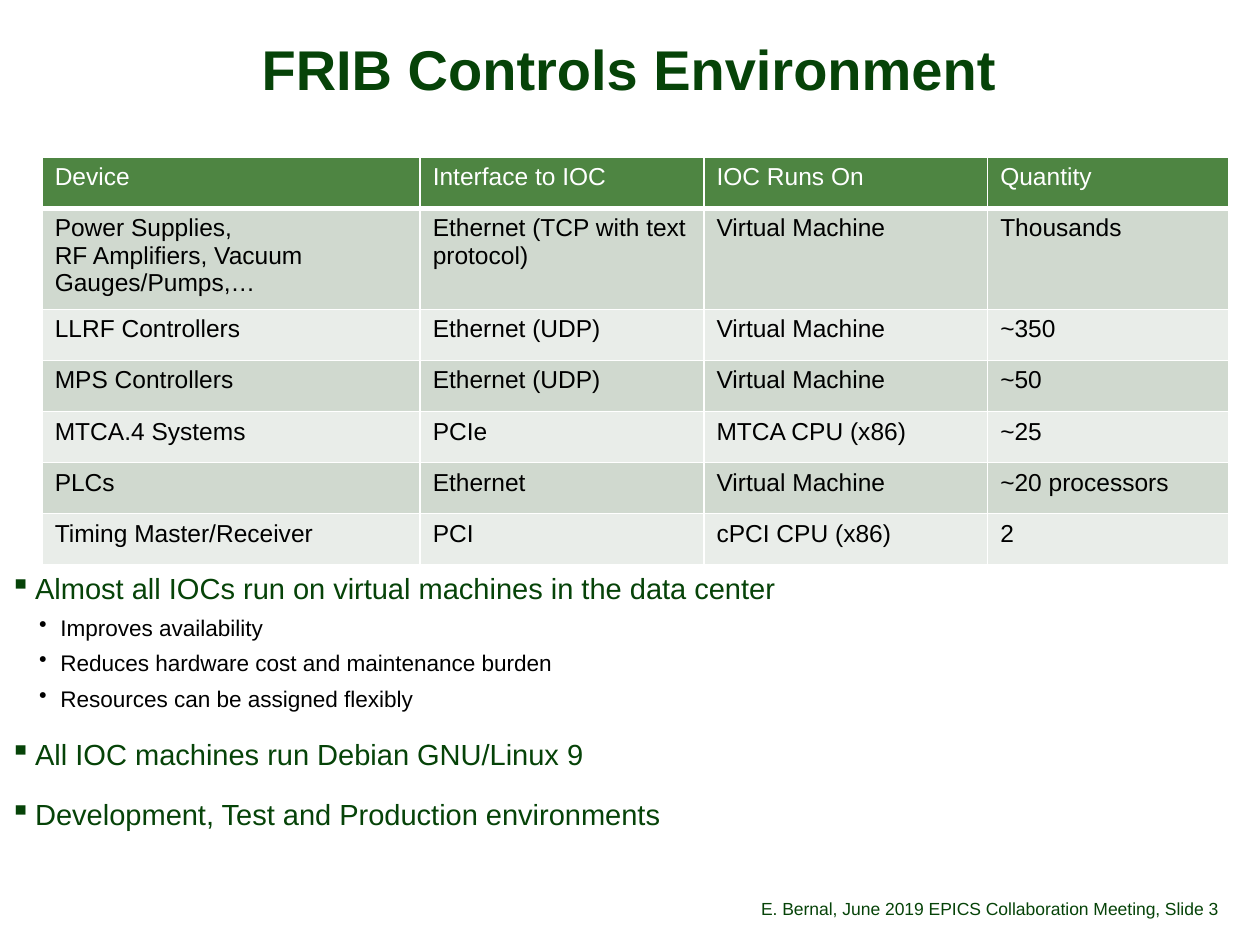
import pptx
import pptx.dml.color
import pptx.enum.text
import pptx.oxml
import pptx.oxml.ns
import pptx.util
from lxml import etree

Cm, Pt = pptx.util.Cm, pptx.util.Pt
ALIGN = pptx.enum.text.PP_ALIGN
ANCHOR = pptx.enum.text.MSO_ANCHOR

TITLE = "FRIB Controls Environment"
FOOTER = "E. Bernal, June 2019 EPICS Collaboration Meeting"
SLIDE_LABEL = ", Slide 3"
DEVICES = [
    ("Device", "Interface to IOC", "IOC Runs On", "Quantity"),
    ("Power Supplies,\vRF Amplifiers, Vacuum Gauges/Pumps,…",
     "Ethernet (TCP with text protocol)", "Virtual Machine", "Thousands"),
    ("LLRF Controllers", "Ethernet (UDP)", "Virtual Machine", "~350"),
    ("MPS Controllers", "Ethernet (UDP)", "Virtual Machine", "~50"),
    ("MTCA.4 Systems", "PCIe", "MTCA CPU (x86)", "~25"),
    ("PLCs", "Ethernet", "Virtual Machine", "~20 processors"),
    ("Timing Master/Receiver", "PCI", "cPCI CPU (x86)", "2"),
]
POINTS = [
    (0, "Almost all IOCs run on virtual machines in the data center"),
    (1, "Improves availability"),
    (1, "Reduces hardware cost and maintenance burden"),
    (1, "Resources can be assigned flexibly"),
    (0, "All IOC machines run Debian GNU/Linux 9"),
    (0, "Development, Test and Production environments"),
]

THEME = {
    "font": "Arial",
    "green": "064308", "black": "000000", "white": "FFFFFF",
    "header": "4E8542", "bands": ("D0D9CF", "E9EDE9"),
    "title": 32, "footer": 10, "table": 14,
}
LEVELS = [
    {"bullet": "▪", "left": 0.51, "hang": 0.51, "before": 12.1, "size": 16.6, "color": "green"},
    {"bullet": "•", "left": 1.02, "hang": 0.43, "before": 2, "size": 12.9, "color": "black"},
]
COLUMN_WIDTHS = (7.62, 5.72, 5.72, 4.87)
ROW_HEIGHT, TALL_ROW_HEIGHT = 1.03, 1.92


def rgb(value):
    return pptx.dml.color.RGBColor.from_string(value)


def apply(target, values):
    for name, value in values.items():
        setattr(target, name, value)


def style_run(r, size, color, bold=False):
    apply(r.font, {"name": THEME["font"], "size": Pt(size), "bold": bold})
    r.font.color.rgb = rgb(THEME[color])


def add_run(p, text, size, color, bold=False):
    r = p.add_run()
    r.text = text
    style_run(r, size, color, bold)


def add_box(slide, box, margins, anchor):
    """Add a text frame; margins are (horizontal, vertical) in cm."""
    tf = slide.shapes.add_textbox(*map(Cm, box)).text_frame
    side, end = map(Cm, margins)
    apply(tf, {"word_wrap": True, "vertical_anchor": anchor,
               "margin_left": side, "margin_right": side,
               "margin_top": end, "margin_bottom": end})
    return tf


def add_line(slide, text, box, margins, anchor, align, spacing, size, bold=False):
    p = add_box(slide, box, margins, anchor).paragraphs[0]
    apply(p, {"alignment": align, "line_spacing": spacing})
    add_run(p, text, size, "green", bold)


def add_points(slide, box):
    tf = add_box(slide, box, (0, 0), ANCHOR.TOP)
    for i, (level, text) in enumerate(POINTS):
        form = LEVELS[level]
        p = tf.add_paragraph() if i else tf.paragraphs[0]
        pPr = p._p.get_or_add_pPr()
        pPr.set("marL", str(Cm(form["left"])))
        pPr.set("indent", str(-Cm(form["hang"])))
        etree.SubElement(pPr, pptx.oxml.ns.qn("a:buChar")).set("char", form["bullet"])
        apply(p, {"level": level, "line_spacing": 0.8, "space_after": Pt(6),
                  "space_before": Pt(form["before"] if i else 0)})
        add_run(p, text, form["size"], form["color"])


def set_borders(cell, bottom):
    tcPr = cell._tc.get_or_add_tcPr()
    widths = {"L": 1, "R": 1, "T": 1, "B": bottom}
    for i, (side, width) in enumerate(widths.items()):
        tcPr.insert(i, pptx.oxml.parse_xml(
            f'<a:ln{side} {pptx.oxml.ns.nsdecls("a")} w="{Pt(width)}"><a:solidFill>'
            f'<a:srgbClr val="{THEME["white"]}"/></a:solidFill></a:ln{side}>'))


def add_devices(slide, left, top):
    heights = [TALL_ROW_HEIGHT if i == 1 else ROW_HEIGHT for i in range(len(DEVICES))]
    table = slide.shapes.add_table(
        len(DEVICES), len(COLUMN_WIDTHS), Cm(left), Cm(top),
        Cm(sum(COLUMN_WIDTHS)), Cm(sum(heights))).table
    for column, width in zip(table.columns, COLUMN_WIDTHS):
        column.width = Cm(width)
    for i, values in enumerate(DEVICES):
        table.rows[i].height = Cm(heights[i])
        fill = THEME["bands"][(i - 1) % 2] if i else THEME["header"]
        for j, value in enumerate(values):
            cell = table.cell(i, j)
            cell.text = value
            for r in cell.text_frame.paragraphs[0].runs:
                style_run(r, THEME["table"], "black" if i else "white")
            cell.fill.solid()
            cell.fill.fore_color.rgb = rgb(fill)
            set_borders(cell, 1 if i else 3)


def main():
    prs = pptx.Presentation()
    apply(prs, {"slide_width": Cm(25.4), "slide_height": Cm(19.05)})
    slide = prs.slides.add_slide(prs.slide_layouts[6])
    add_line(slide, TITLE, (0.2, 0.79, 24.97, 1.35), (0.15, 0.05),
             ANCHOR.MIDDLE, ALIGN.CENTER, 0.88, THEME["title"], True)
    footer_top, footer_height, footer_split = 17.65, 1.02, 23.29
    for text, left, right, align in (
            (FOOTER, 11.51, footer_split, ALIGN.RIGHT),
            (SLIDE_LABEL, footer_split, 25.4, ALIGN.LEFT)):
        add_line(slide, text, (left, footer_top, right - left, footer_height),
                 (0, 0.13), ANCHOR.BOTTOM, align, 0.9, THEME["footer"])
    add_points(slide, (0.2, 11.63, 24.97, 5.28))
    add_devices(slide, 0.85, 3.17)
    prs.save("out.pptx")


if __name__ == "__main__":
    main()
